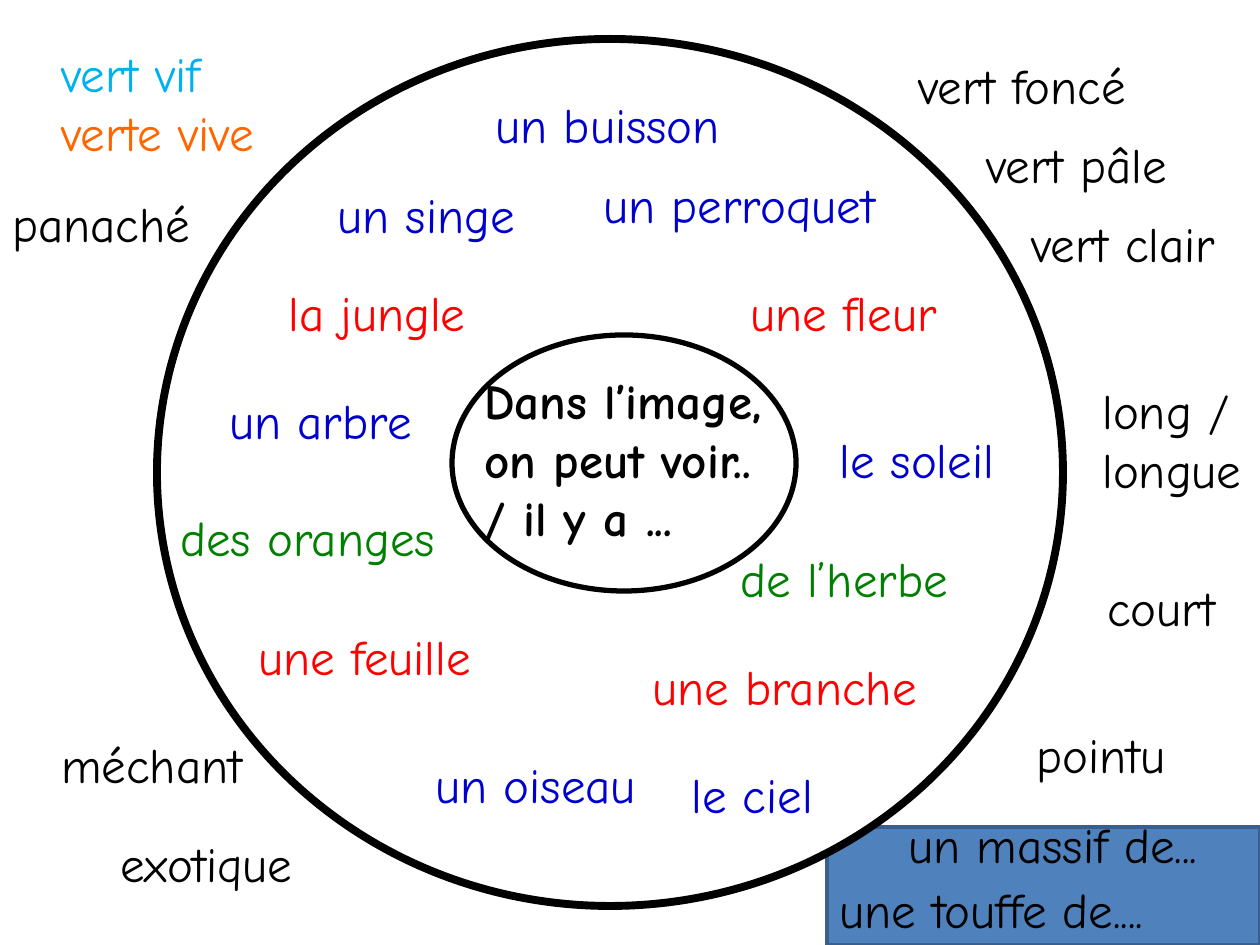
from pptx import Presentation
from pptx.dml.color import RGBColor
from pptx.enum.shapes import MSO_SHAPE
from pptx.enum.text import MSO_AUTO_SIZE
from pptx.util import Emu, Pt

RECTANGLE, ELLIPSE = MSO_SHAPE.RECTANGLE, MSO_SHAPE.OVAL
FIT_TEXT = MSO_AUTO_SIZE.SHAPE_TO_FIT_TEXT
EMU_PER_PX = 914400 / 126
FONT = "Comic Neue"
FONT_SIZE = 28
LINE_HEIGHT = 59
BOX_PADDING = 13

COLORS = {
    "black": "000000",
    "white": "FFFFFF",
    "masculine": "0000CC",
    "feminine": "FF0000",
    "plural": "008000",
    "sky": "00B0F0",
    "orange": "FF6600",
    "panel": "4F81BD",
    "panel_line": "3A5F8C",
}

NOUNS = {
    "masculine": [
        ("un singe", 325, 178, 209),
        ("un arbre", 217, 384, 222),
        ("le soleil", 827, 423, 199),
        ("un oiseau", 423, 748, 234),
        ("un perroquet", 591, 168, 321),
        ("un buisson", 483, 88, 261),
        ("le ciel", 679, 758, 161),
    ],
    "feminine": [
        ("une fleur", 738, 276, 234),
        ("une feuille", 246, 620, 265),
        ("une branche", 640, 650, 305),
        ("la jungle", 276, 276, 218),
    ],
    "plural": [
        ("des oranges", 168, 501, 300),
        ("de l’herbe", 728, 542, 276),
    ],
}

DESCRIPTIONS = [
    ("vert pâle", 974, 128, 286),
    ("vert clair", 1019, 207, 241),
    ("vert foncé", 906, 49, 268),
    ("exotique", 108, 827, 223),
    ("panaché", 0, 187, 209),
    ("pointu", 1024, 718, 166),
    ("méchant", 49, 728, 219),
    ("long /\nlongue", 1090, 374, 170),
    ("court", 1095, 571, 165),
    ("une touffe de....", 827, 873, 392),
    ("un massif de...", 896, 808, 352),
]


def px(length):
    """Turn whole px into EMU."""
    return Emu(round(length * EMU_PER_PX))


def rgb(name):
    """Look up a named colour."""
    return RGBColor.from_string(COLORS[name])


def add_outlined_shape(slide, kind, box, line_width, fill=None, line="black"):
    """Add a preset shape with an outline and an optional fill."""
    shape = slide.shapes.add_shape(kind, *map(px, box))
    shape.shadow.inherit = False
    if fill:
        shape.fill.solid()
        shape.fill.fore_color.rgb = rgb(fill)
    else:
        shape.fill.background()
    shape.line.color.rgb = rgb(line)
    shape.line.width = Pt(line_width)


def add_text(slide, text, left, top, width, colors=("black",), bold=False):
    """Add a text box whose lines take the given colours in turn."""
    lines = text.split("\n")
    height = LINE_HEIGHT * len(lines) + BOX_PADDING
    shape = slide.shapes.add_textbox(px(left), px(top), px(width), px(height))
    frame = shape.text_frame
    frame.word_wrap = False
    frame.auto_size = FIT_TEXT
    for index, line in enumerate(lines):
        paragraph = frame.add_paragraph() if index else frame.paragraphs[0]
        run = paragraph.add_run()
        run.text = line
        run.font.name = FONT
        run.font.size = Pt(FONT_SIZE)
        run.font.bold = bold
        run.font.color.rgb = rgb(colors[index % len(colors)])


def main():
    """Build the vocabulary circle slide."""
    presentation = Presentation()
    presentation.slide_width, presentation.slide_height = px(1260), px(945)
    slide = presentation.slides.add_slide(presentation.slide_layouts[6])

    add_outlined_shape(slide, RECTANGLE, (827, 827, 433, 118), 2,
                       fill="panel", line="panel_line")
    add_outlined_shape(slide, ELLIPSE, (157, 39, 906, 867), 4.5, fill="white")
    add_outlined_shape(slide, ELLIPSE, (452, 335, 344, 256), 3)

    add_text(slide, "Dans l’image,\non peut voir..\n/ il y a ...",
             472, 364, 375, bold=True)
    for gender, nouns in NOUNS.items():
        for noun in nouns:
            add_text(slide, *noun, colors=(gender,))
    add_text(slide, "vert vif\nverte vive", 49, 37, 305,
             colors=("sky", "orange"))
    for description in DESCRIPTIONS:
        add_text(slide, *description)

    presentation.save("out.pptx")


if __name__ == "__main__":
    main()
